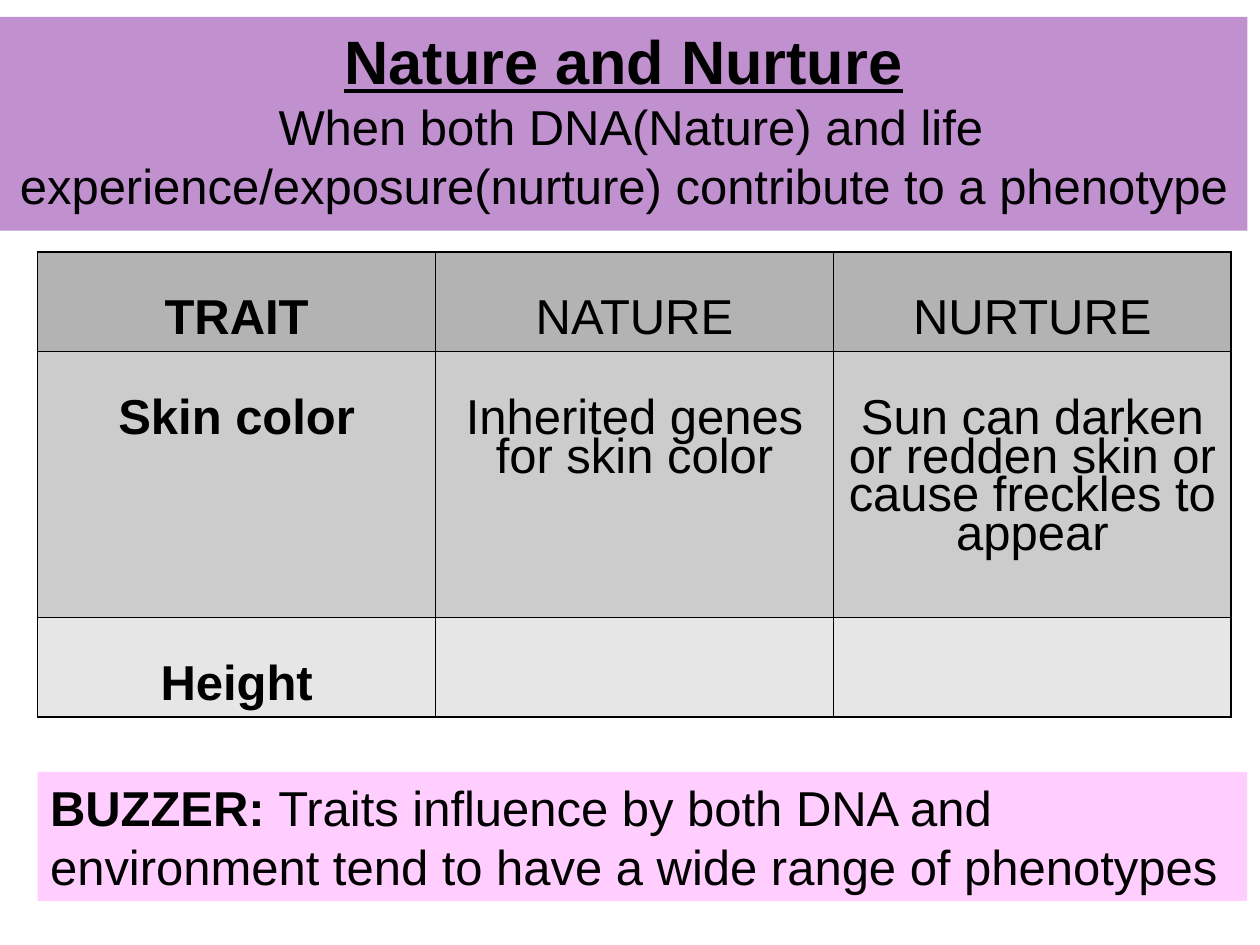
from lxml import etree
from pptx import Presentation
from pptx import util as u
from pptx.dml.color import RGBColor
from pptx.enum import shapes, text
from pptx.oxml import ns

HUES = {"ink": "000000", "title": "C090CF", "buzzer": "FFCEFF",
        "head": "B3B3B3", "mid": "CCCCCC", "low": "E6E6E6"}
MID = text.PP_ALIGN.CENTER
LEFT = text.PP_ALIGN.LEFT
PADS = {"margin_left": u.Cm(0.25), "margin_right": u.Cm(0.25),
        "margin_top": u.Cm(0.13), "margin_bottom": u.Cm(0.13)}


def paint(item, hue):
    item.fill.solid()
    item.fill.fore_color.rgb = RGBColor.from_string(HUES[hue])


def add_run(para, words, size=28, **style):
    run = para.add_run()
    run.text = words
    look = {"name": "Arial", "size": u.Pt(size), "bold": False, **style}
    for key, val in look.items():
        setattr(run.font, key, val)
    run.font.color.rgb = RGBColor.from_string(HUES["ink"])


prs = Presentation()
prs.slide_width = u.Cm(25.4)
prs.slide_height = u.Cm(19.05)
slide = prs.slides.add_slide(prs.slide_layouts[6])

panels = [
    ("title", (0, 0.34, 25.15, 4.31), 0.33, MID, [
        (-0.34, [("Nature and Nurture",
                  {"size": 35, "bold": True, "underline": True})]),
        (0.28, [("When both DNA(Nature) and life experience/exposure(nurture) "
                 "contribute to a phenotype", {})])]),
    ("buzzer", (0.76, 15.56, 24.38, 2.6), 0.13, LEFT, [
        (0, [("BUZZER: ", {"bold": True}),
             ("Traits influence by both DNA and environment tend to have "
              "a wide range of phenotypes", {})])]),
]
for hue, box, foot, align, paras in panels:
    panel = slide.shapes.add_shape(shapes.MSO_SHAPE.RECTANGLE, *map(u.Cm, box))
    panel.shadow.inherit = False
    panel.line.fill.background()
    paint(panel, hue)
    frame = panel.text_frame
    form = {**PADS, "margin_bottom": u.Cm(foot), "word_wrap": True,
            "vertical_anchor": text.MSO_ANCHOR.MIDDLE}
    for key, val in form.items():
        setattr(frame, key, val)
    for i, (indent, runs) in enumerate(paras):
        para = frame.paragraphs[0] if i == 0 else frame.add_paragraph()
        para.alignment = align
        props = para._p.get_or_add_pPr()
        props.set("marL", "0")
        props.set("indent", str(u.Cm(indent)))
        for words, style in runs:
            add_run(para, words, **style)

rows = [
    ("head", 2.01, ["TRAIT", "NATURE", "NURTURE"]),
    ("mid", 5.36, ["Skin color", "Inherited genes for skin color",
                   "Sun can darken or redden skin or cause freckles to appear"]),
    ("low", 2.01, ["Height", "", ""]),
]
grid = slide.shapes.add_table(3, 3, u.Cm(0.76), u.Cm(5.08),
                              u.Cm(24.06), u.Cm(9.38))
table = grid.table
for col in table.columns:
    col.width = u.Cm(8.02)
for r, (hue, high, words) in enumerate(rows):
    table.rows[r].height = u.Cm(high)
    for c, word in enumerate(words):
        cell = table.cell(r, c)
        for key, val in {**PADS, "margin_top": u.Cm(1.04)}.items():
            setattr(cell, key, val)
        props = cell._tc.get_or_add_tcPr()
        for side in ("lnL", "lnR", "lnT", "lnB"):
            line = etree.SubElement(props, ns.qn("a:" + side), w=str(u.Pt(1)))
            fill = etree.SubElement(line, ns.qn("a:solidFill"))
            etree.SubElement(fill, ns.qn("a:srgbClr"), val=HUES["ink"])
        paint(cell, hue)
        if word:
            para = cell.text_frame.paragraphs[0]
            para.alignment = MID
            para.line_spacing = 0.71
            add_run(para, word, bold=c == 0)

prs.save("out.pptx")
